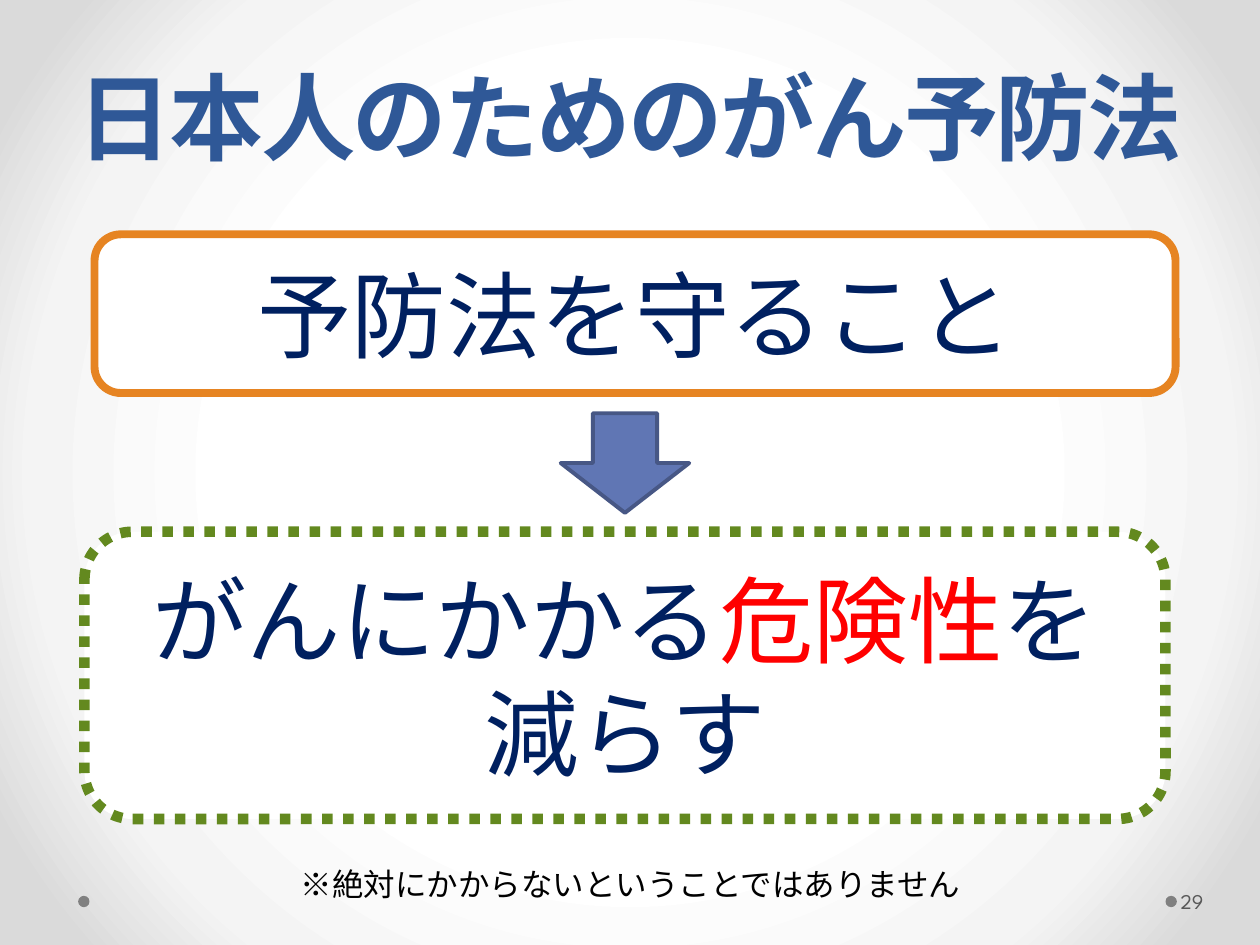
import pptx
import pptx.util
import pptx.dml.color
import pptx.enum.dml
import pptx.enum.shapes
import pptx.enum.text
import pptx.oxml
import pptx.oxml.ns
from lxml import etree

Inches = pptx.util.Inches
Pt = pptx.util.Pt
SHAPES = pptx.enum.shapes.MSO_SHAPE
ALIGN = pptx.enum.text.PP_ALIGN
ANCHOR = pptx.enum.text.MSO_ANCHOR

THEME = {
    "title": {"size": 54, "font": "Vollkorn", "color": "2F5897", "bold": True},
    "message": {"size": 54, "font": "Noto Sans CJK JP", "color": "002060"},
    "note": {"size": 18, "font": "Vollkorn", "color": "000000"},
    "number": {"size": 12, "font": "League Spartan", "color": "595959"},
    "east_asian": "Noto Sans CJK JP",
    "emphasis": "FF0000",
    "panel": "FFFFFF",
    "action_line": "E68422",
    "result_line": "63891F",
    "arrow": "6076B4",
    "arrow_line": "475785",
    "dot": "808080",
    "background": [(50, "FFFFFF"), (76, "F4F4F4"), (92, "DADADA")],
}

# Each paragraph is a list of (text, emphasised) pieces.
TITLE = [[("日本人のためのがん予防法", False)]]
ACTION = [[("予防法を守ること", False)]]
RESULT = [
    [("がんにかかる", False), ("危険性", True), ("を", False)],
    [("減らす", False)],
]
NOTE = [[("※絶対にかからないということではありません", False)]]
NUMBER = [[("29", False)]]

DOT_SIZE, DOT_TOP, DOT_LEFTS = 0.09, 7.11, (9.25, 0.62)


def rgb(value):
    return pptx.dml.color.RGBColor.from_string(value)


def paint_background(slide):
    """Fill the slide with a circular gradient around its centre."""
    slide.background.fill.gradient()
    gradient = slide.background._cSld.bg.bgPr.find(pptx.oxml.ns.qn("a:gradFill"))
    stops = "".join(
        f'<a:gs pos="{position * 1000}"><a:srgbClr val="{color}"/></a:gs>'
        for position, color in THEME["background"]
    )
    radial = pptx.oxml.parse_xml(
        f'<a:gradFill {pptx.oxml.ns.nsdecls("a")} rotWithShape="1">'
        f"<a:gsLst>{stops}</a:gsLst>"
        '<a:path path="circle"><a:fillToRect l="50000" t="50000" r="50000" b="50000"/>'
        "</a:path></a:gradFill>"
    )
    gradient.getparent().replace(gradient, radial)


def add_panel(slide, preset, box, fill, line=None, width=0):
    panel = slide.shapes.add_shape(preset, *map(Inches, box))
    panel.shadow.inherit = False
    panel.fill.solid()
    panel.fill.fore_color.rgb = rgb(fill)
    if line:
        panel.line.color.rgb = rgb(line)
        panel.line.width = Pt(width)
    else:
        panel.line.fill.background()
    return panel


def write(holder, paragraphs, style, anchor=ANCHOR.MIDDLE, align=ALIGN.CENTER):
    frame = holder.text_frame
    frame.word_wrap = True
    frame.vertical_anchor = anchor
    for index, pieces in enumerate(paragraphs):
        paragraph = frame.add_paragraph() if index else frame.paragraphs[0]
        paragraph.alignment = align
        font = paragraph.font
        font.size = Pt(style["size"])
        font.bold = style.get("bold", False)
        font.color.rgb = rgb(style["color"])
        font.name = style["font"]
        east_asian = etree.SubElement(font._element, pptx.oxml.ns.qn("a:ea"))
        east_asian.set("typeface", THEME["east_asian"])
        for text, emphasised in pieces:
            run = paragraph.add_run()
            run.text = text
            if len({flag for _, flag in pieces}) > 1:
                run.font.color.rgb = rgb(THEME["emphasis"] if emphasised else style["color"])
    return frame


def add_label(slide, box, paragraphs, style, **layout):
    return write(slide.shapes.add_textbox(*map(Inches, box)), paragraphs, style, **layout)


def main():
    deck = pptx.Presentation()
    deck.slide_width, deck.slide_height = Inches(10), Inches(7.5)
    slide = deck.slides.add_slide(deck.slide_layouts[6])
    paint_background(slide)

    for left in DOT_LEFTS:
        add_panel(slide, SHAPES.OVAL, (left, DOT_TOP, DOT_SIZE, DOT_SIZE), THEME["dot"])

    heading = add_label(slide, (0.5, 0.39, 9, 1.15), TITLE, THEME["title"]).paragraphs[0]
    heading.line_spacing = Pt(58)
    heading.runs[0].font._element.set("spc", "-150")

    action = add_panel(slide, SHAPES.ROUNDED_RECTANGLE, (0.75, 1.86, 8.58, 1.26),
                       THEME["panel"], THEME["action_line"], 4.5)
    write(action, ACTION, THEME["message"])

    add_panel(slide, SHAPES.DOWN_ARROW, (4.45, 3.28, 1.02, 0.79),
              THEME["arrow"], THEME["arrow_line"], 2.25)

    result = add_panel(slide, SHAPES.ROUNDED_RECTANGLE, (0.67, 4.22, 8.58, 2.28),
                       THEME["panel"], THEME["result_line"], 6)
    # ROUND_DOT is the sysDot preset.
    result.line.dash_style = pptx.enum.dml.MSO_LINE.ROUND_DOT
    write(result, RESULT, THEME["message"])

    add_label(slide, (1.54, 6.82, 6.93, 0.4), NOTE, THEME["note"], anchor=ANCHOR.TOP)
    number = add_label(slide, (9.34, 6.95, 0.61, 0.4), NUMBER, THEME["number"],
                       align=ALIGN.LEFT)
    number.margin_left, number.margin_right = Inches(0.03), Inches(0.05)

    deck.save("out.pptx")


if __name__ == "__main__":
    main()
